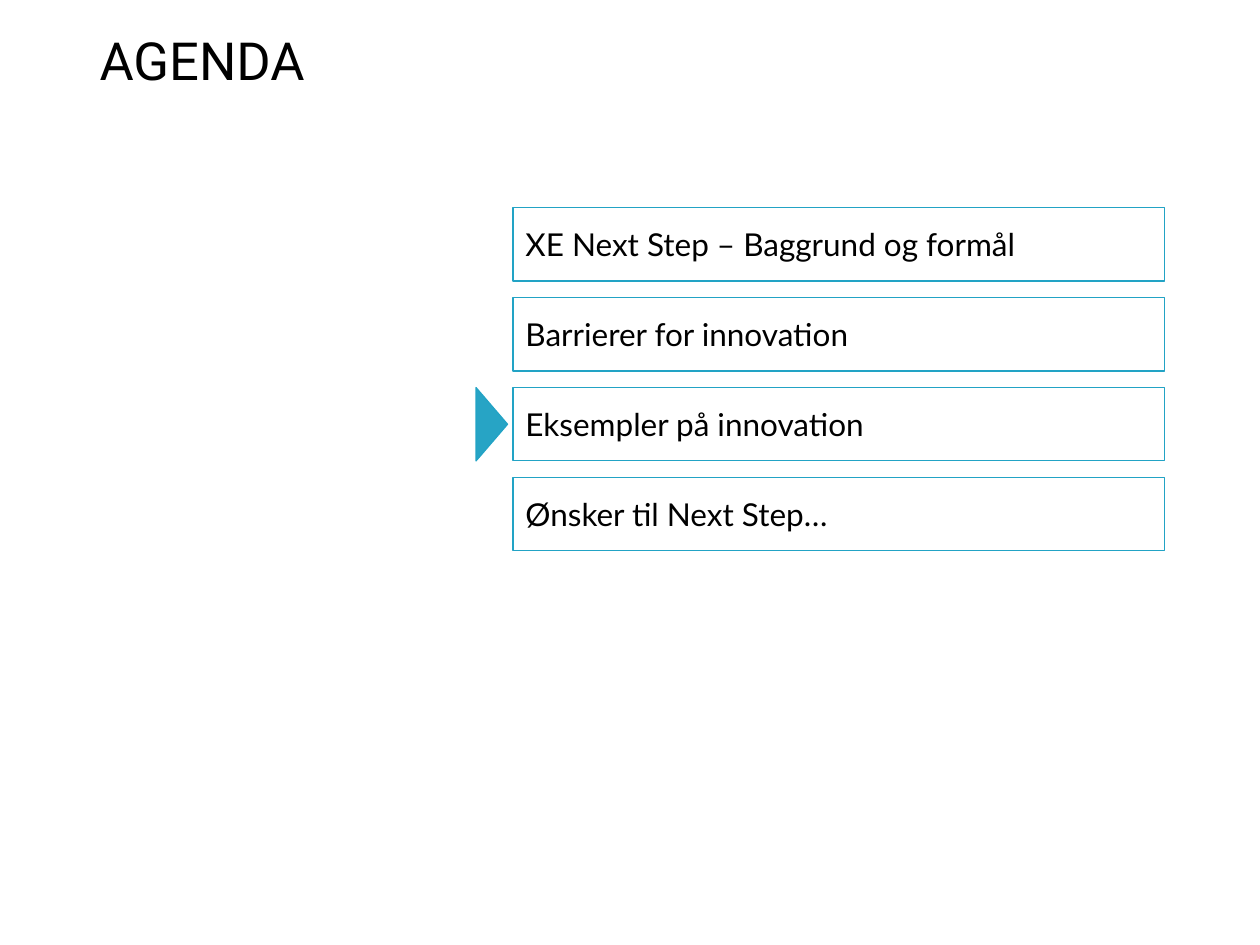
from pptx import Presentation
from pptx.dml.color import RGBColor
from pptx.enum.shapes import MSO_SHAPE
from pptx.enum.text import MSO_ANCHOR, MSO_AUTO_SIZE, PP_ALIGN
from pptx.util import Pt

RECT, TRI = MSO_SHAPE.RECTANGLE, MSO_SHAPE.ISOSCELES_TRIANGLE
TOP, MID = MSO_ANCHOR.TOP, MSO_ANCHOR.MIDDLE
LEFT = PP_ALIGN.LEFT

TITLE = "AGENDA"
ITEMS = [
    "XE Next Step – Baggrund og formål",
    "Barrierer for innovation",
    "Eksempler på innovation",
    "Ønsker til Next Step…",
]
ACTIVE = 2
BLACK, EDGE, MARK = "000000", "22A3C5", "27A4C5"
ROW_X, ROW_Y, ROW_W, ROW_H, STEP = 293.2, 118.7, 372.2, 41.9, 51.4
MARK_X, MARK_H = 281, 18


def color(code):
    return RGBColor.from_string(code)


def write(shape, text, font, size, anchor=MID, pad=(7.2, 3.6, 7.2, 3.6), space=None):
    frame = shape.text_frame
    frame.word_wrap = True
    frame.auto_size = MSO_AUTO_SIZE.NONE
    frame.vertical_anchor = anchor
    (frame.margin_left, frame.margin_top,
     frame.margin_right, frame.margin_bottom) = map(Pt, pad)
    para = frame.paragraphs[0]
    para.alignment = LEFT
    para.space_before = Pt(0)
    if space:
        para.line_spacing = Pt(space)
    run = para.add_run()
    run.text = text
    run.font.name = font
    run.font.size = Pt(size)
    run.font.color.rgb = color(BLACK)


def draw(slide, kind, x, y, w, h, fill=None):
    shape = slide.shapes.add_shape(kind, Pt(x), Pt(y), Pt(w), Pt(h))
    shape.shadow.inherit = False
    if fill:
        shape.fill.solid()
        shape.fill.fore_color.rgb = color(fill)
    else:
        shape.fill.background()
    shape.line.color.rgb = color(EDGE)
    shape.line.width = Pt(0.75)
    return shape


def main():
    deck = Presentation()
    deck.slide_width, deck.slide_height = Pt(720), Pt(540)
    slide = deck.slides.add_slide(deck.slide_layouts[5])

    title = slide.shapes.title
    title.left, title.top, title.width, title.height = map(Pt, (56.9, 19.4, 496, 96.5))
    write(title, TITLE, "Roboto", 30, anchor=TOP, pad=(0, 2.9, 0, 0), space=30)

    for i, item in enumerate(ITEMS):
        row = draw(slide, RECT, ROW_X, ROW_Y + i * STEP, ROW_W, ROW_H)
        write(row, item, "Lato", 18)

    mid = ROW_Y + ACTIVE * STEP + ROW_H / 2
    mark = draw(slide, TRI, MARK_X - ROW_H / 2, mid - MARK_H / 2, ROW_H, MARK_H, MARK)
    mark.rotation = 90

    deck.save("out.pptx")


if __name__ == "__main__":
    main()
